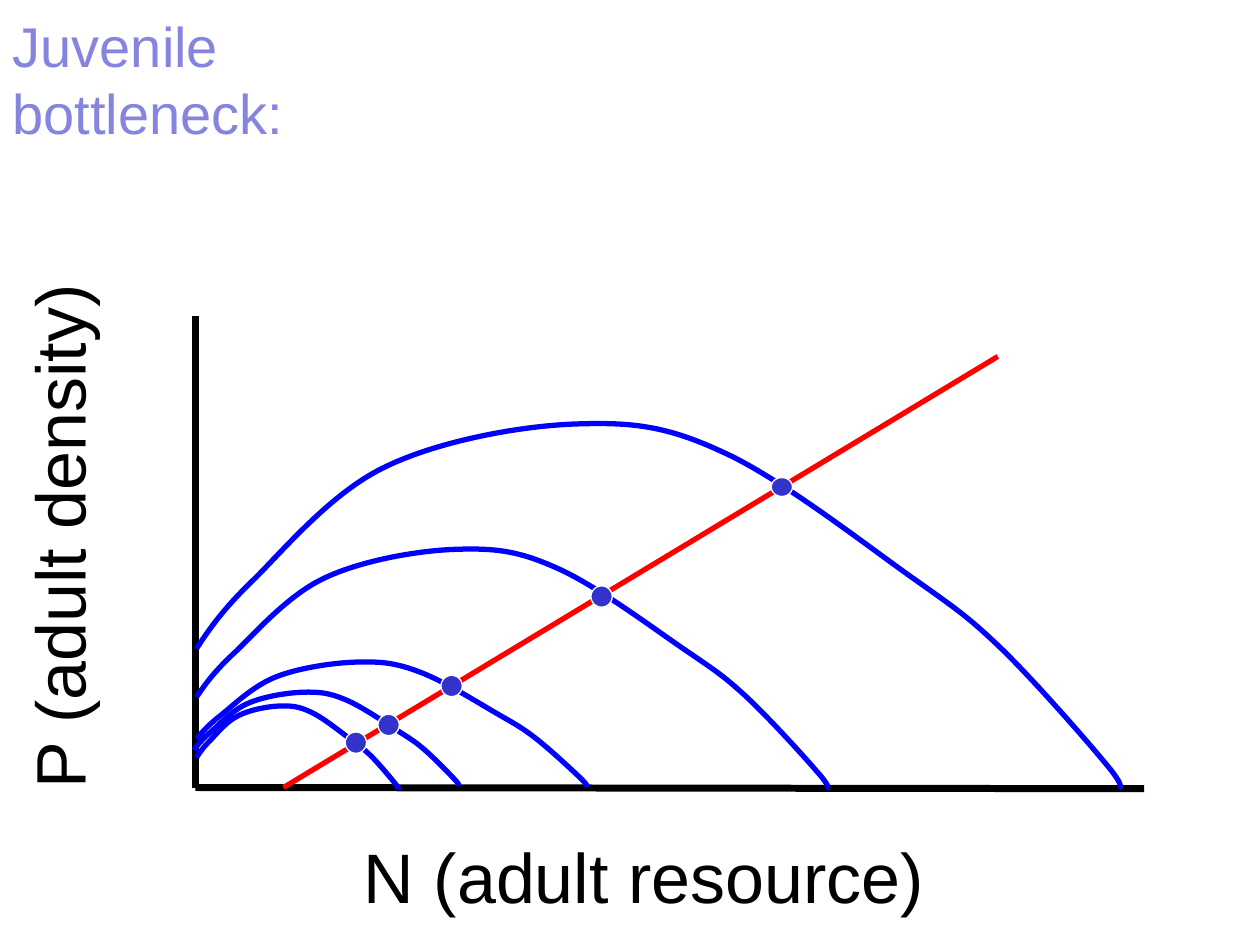
from dataclasses import dataclass

from pptx import Presentation
from pptx.dml.color import RGBColor as RGB
from pptx.enum.shapes import MSO_CONNECTOR as CONN, MSO_SHAPE as SHAPE
from pptx.enum.text import MSO_ANCHOR as ANCHOR, MSO_AUTO_SIZE as AUTO, PP_ALIGN as ALIGN
from pptx.oxml.ns import qn
from pptx.util import Pt


@dataclass(frozen=True)
class Theme:
    font: str = "Arial"
    title: RGB = RGB(0x85, 0x85, 0xE0)
    ink: RGB = RGB(0, 0, 0)
    curve: RGB = RGB(0, 0, 0xFF)
    isocline: RGB = RGB(0xFF, 0, 0)
    dot: RGB = RGB(0x33, 0x33, 0xCC)
    paper: RGB = RGB(0xFF, 0xFF, 0xFF)
    title_size: int = 32
    label_size: int = 40
    axis_width: int = 4
    line_width: int = 3


THEME = Theme()

# Bezier points of the hump, in percent of the curve's box
HUMP = [
    (0, 61.6),
    (1.4, 56.2), (2.9, 50.7), (6.3, 42.5),
    (9.6, 34.2), (14.7, 18.8), (20.5, 12),
    (26.2, 5.1), (34.9, 1), (41, 0.5),
    (47, 0), (50.7, 1), (56.8, 8.2),
    (62.9, 15.1), (72.3, 33.6), (77.3, 42.5),
    (82.3, 51.4), (83.4, 53.4), (86.8, 61.6),
    (90.2, 69.9), (95.8, 86), (97.8, 92.1),
    (100, 98.6), (99.7, 99.3), (99.5, 99.7),
]

# Relative to the plot's top left corner: left, top, width, height
CURVES = [
    (0.7, 222.5, 115.9, 48.2),
    (-0.7, 214.6, 151.9, 54),
    (0.7, 197.3, 223.9, 72),
    (0.7, 132.5, 362.2, 138.2),
    (0.7, 60.5, 529.9, 210.2),
]
# Centres of the equilibria and their heights
DOT_WIDTH = 12.2
DOTS = [(335.2, 97.6, 10.8), (232.2, 160.2, 12.2), (110.5, 233.6, 12.2),
        (91.8, 243.7, 12.2), (146.5, 211.3, 12.2)]


def style_text(tf, size, color):
    for p in tf.paragraphs:
        for r in p.runs:
            r.font.name = THEME.font
            r.font.size = Pt(size)
            r.font.color.rgb = color


def add_line(shapes, x1, y1, x2, y2, color, width):
    line = shapes.add_connector(CONN.STRAIGHT, Pt(x1), Pt(y1), Pt(x2), Pt(y2))
    line.line.color.rgb = color
    line.line.width = Pt(width)
    line._element.spPr.append(line._element.makeelement(qn("a:effectLst"), {}))


def add_label(shapes, text, x, y, w, h, rotation=0):
    sp = shapes.add_textbox(Pt(x), Pt(y), Pt(w), Pt(h))
    sp.rotation = rotation
    tf = sp.text_frame
    tf.word_wrap = False
    tf.auto_size = AUTO.SHAPE_TO_FIT_TEXT
    tf.text = text
    tf.paragraphs[0].line_spacing = 1.15
    style_text(tf, THEME.label_size, THEME.ink)


def bend(sp):
    """Turn every three straight segments of a freeform into one Bezier segment."""
    lines = list(sp._element.iter(qn("a:lnTo")))
    for first, second, third in zip(lines[::3], lines[1::3], lines[2::3]):
        bezier = first.makeelement(qn("a:cubicBezTo"), {})
        first.addprevious(bezier)
        for segment in (first, second, third):
            bezier.append(segment[0])
            segment.getparent().remove(segment)


def add_curve(shapes, x, y, w, h):
    points = [(Pt(x + w * px / 100), Pt(y + h * py / 100)) for px, py in HUMP]
    builder = shapes.build_freeform(*points[0])
    builder.add_line_segments(points[1:], close=False)
    sp = builder.convert_to_shape()
    bend(sp)
    sp.shadow.inherit = False
    sp.fill.background()
    sp.line.color.rgb = THEME.curve
    sp.line.width = Pt(THEME.line_width)


def add_dot(shapes, cx, cy, h):
    sp = shapes.add_shape(SHAPE.OVAL, Pt(cx - DOT_WIDTH / 2), Pt(cy - h / 2),
                          Pt(DOT_WIDTH), Pt(h))
    sp.shadow.inherit = False
    sp.fill.solid()
    sp.fill.fore_color.rgb = THEME.dot
    sp.line.color.rgb = THEME.paper
    sp.line.width = Pt(0.75)


def place_title(slide, text, x, y, w, h):
    sp = slide.shapes.title
    sp.left, sp.top, sp.width, sp.height = Pt(x), Pt(y), Pt(w), Pt(h)
    tf = sp.text_frame
    tf.text = text
    tf.word_wrap = True
    tf.auto_size = AUTO.NONE
    tf.vertical_anchor = ANCHOR.MIDDLE
    tf.paragraphs[0].alignment = ALIGN.LEFT
    style_text(tf, THEME.title_size, THEME.title)


def draw_axes(slide, x, y, w, h):
    shapes = slide.shapes.add_group_shape().shapes
    base = y + h
    add_line(shapes, x, y, x, base, THEME.ink, THEME.axis_width)
    add_line(shapes, x, base, x + w, base + 0.7, THEME.ink, THEME.axis_width)
    add_label(shapes, "N (adult resource)", x + 89.3, base + 15.8, 337.7, 61.9)
    add_label(shapes, "P (adult density)", x - 235.4, y + 92.9, 306, 61.9, 270)


def draw_plot(slide, x, y, w, h):
    draw_axes(slide, x, y, w, h)
    for left, top, width, height in CURVES:
        add_curve(slide.shapes, x + left, y + top, width, height)
    add_line(slide.shapes, x + 50.4, y + h, x + 458.6, y + 23,
             THEME.isocline, THEME.line_width)
    for cx, cy, height in DOTS:
        add_dot(slide.shapes, x + cx, y + cy, height)


def main():
    prs = Presentation()
    prs.slide_width, prs.slide_height = Pt(720), Pt(540)
    slide = prs.slides.add_slide(prs.slide_layouts[5])
    place_title(slide, "Juvenile bottleneck:", 0, 2.2, 275.8, 85)
    draw_plot(slide, 111.6, 180.7, 542.2, 269.3)
    prs.save("out.pptx")


if __name__ == "__main__":
    main()
